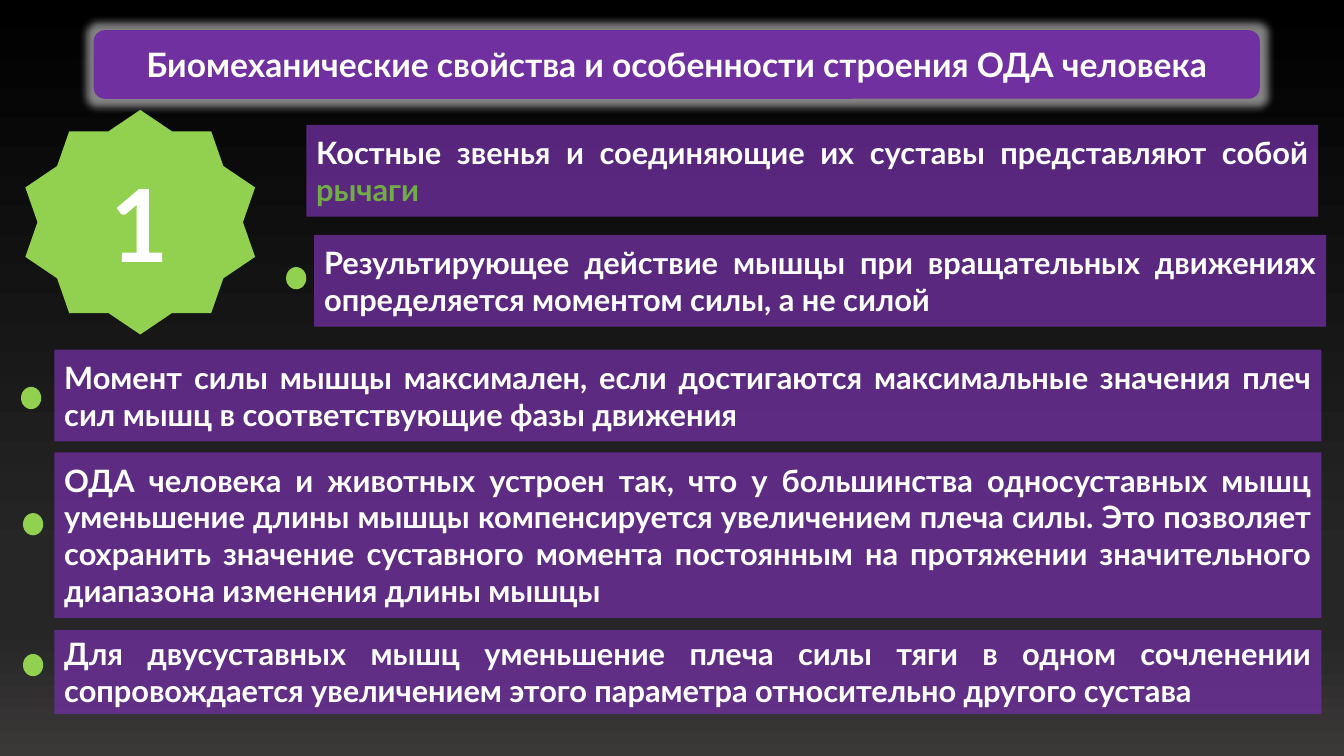
from lxml.etree import SubElement
from pptx import Presentation
from pptx.dml.color import RGBColor
from pptx.enum.shapes import MSO_SHAPE
from pptx.enum.text import MSO_ANCHOR, PP_ALIGN
from pptx.oxml.ns import qn
from pptx.util import Cm, Pt

PURPLE = RGBColor(0x70, 0x30, 0xA0)
LIME = RGBColor(0x92, 0xD0, 0x50)
GREEN = RGBColor(0x70, 0xAD, 0x47)
WHITE = RGBColor(0xFF, 0xFF, 0xFF)
BLACK = RGBColor(0x00, 0x00, 0x00)
CHARCOAL = RGBColor(0x26, 0x26, 0x26)
WARM_GREY = RGBColor(0x3B, 0x38, 0x38)
BACKGROUND_STOPS = [(0, BLACK), (74, CHARCOAL), (83, CHARCOAL), (100, WARM_GREY)]

FONT = "Lato"
TITLE = "Биомеханические свойства и особенности строения ОДА человека"

# Left, top, width, height in cm, then (text, colour) runs
STATEMENTS = [
    (7.72, 3.15, 25.5, 2.31, [
        ("Костные звенья и соединяющие их суставы представляют собой ", WHITE),
        ("рычаги", GREEN)]),
    (7.92, 5.92, 25.5, 2.31, [
        ("Результирующее действие мышцы при вращательных движениях "
         "определяется моментом силы, а не силой", WHITE)]),
    (1.37, 8.81, 31.93, 2.31, [
        ("Момент силы мышцы максимален, если достигаются максимальные значения "
         "плеч сил мышц в соответствующие фазы движения", WHITE)]),
    (1.37, 11.4, 31.93, 4.17, [
        ("ОДА человека и животных устроен так, что у большинства односуставных "
         "мышц уменьшение длины мышцы компенсируется увеличением плеча силы. "
         "Это позволяет сохранить значение суставного момента постоянным на "
         "протяжении значительного диапазона изменения длины мышцы", WHITE)]),
    (1.37, 15.88, 31.93, 2.11, [
        ("Для двусуставных мышц уменьшение плеча силы тяги в одном сочленении "
         "сопровождается увеличением этого параметра относительно другого "
         "сустава", WHITE)]),
]
MARKERS = [(7.21, 6.73), (0.53, 9.75), (0.58, 12.93), (0.58, 16.48)]


def add_color(parent, color, alpha=None):
    """Append an a:srgbClr element, with opacity in percent if given."""
    element = SubElement(parent, qn("a:srgbClr"), val=str(color))
    if alpha is not None:
        SubElement(element, qn("a:alpha"), val=str(alpha * 1000))


def set_background(slide):
    fill = slide.background.fill
    fill.gradient()
    fill.gradient_angle = 270
    stop_list = next(slide.background._cSld.iter(qn("a:gsLst")))
    for stop in list(stop_list):
        stop_list.remove(stop)
    for position, color in BACKGROUND_STOPS:
        stop = SubElement(stop_list, qn("a:gs"), pos=str(position * 1000))
        add_color(stop, color)


def add_filled_shape(slide, kind, left, top, width, height, color):
    shape = slide.shapes.add_shape(kind, Cm(left), Cm(top), Cm(width), Cm(height))
    shape.shadow.inherit = False
    shape.fill.solid()
    shape.fill.fore_color.rgb = color
    shape.line.fill.background()
    return shape


def write_text(shape, runs, size, alignment):
    shape.text_frame.word_wrap = True
    shape.text_frame.vertical_anchor = MSO_ANCHOR.MIDDLE
    paragraph = shape.text_frame.paragraphs[0]
    paragraph.alignment = alignment
    paragraph.font.name = FONT
    paragraph.font.size = Pt(size)
    paragraph.font.bold = True
    for text, color in runs:
        run = paragraph.add_run()
        run.text = text
        run.font.color.rgb = color


def add_glow(shape, color, radius, alpha):
    effects = shape._element.spPr.find(qn("a:effectLst"))
    add_color(SubElement(effects, qn("a:glow"), rad=str(radius)), color, alpha)


def add_title(slide):
    title = add_filled_shape(slide, MSO_SHAPE.FLOWCHART_ALTERNATE_PROCESS,
                             2.36, 0.76, 29.39, 1.73, PURPLE)
    add_glow(title, WHITE, Pt(11), 50)
    write_text(title, [(TITLE, WHITE)], 24, PP_ALIGN.CENTER)


def add_number_star(slide):
    star = add_filled_shape(slide, MSO_SHAPE.STAR_10_POINT,
                            0.64, 2.77, 5.79, 5.66, LIME)
    write_text(star, [("1", WHITE)], 72, PP_ALIGN.CENTER)


def add_statement(slide, left, top, width, height, runs):
    box = add_filled_shape(slide, MSO_SHAPE.FLOWCHART_PROCESS,
                           left, top, width, height, PURPLE)
    color = box._element.spPr.find(qn("a:solidFill")).find(qn("a:srgbClr"))
    SubElement(color, qn("a:alpha"), val="77000")
    write_text(box, runs, 22, PP_ALIGN.JUSTIFY)


def main():
    presentation = Presentation()
    presentation.slide_width = Cm(33.87)
    presentation.slide_height = Cm(19.05)
    slide = presentation.slides.add_slide(presentation.slide_layouts[6])

    set_background(slide)
    add_title(slide)
    add_number_star(slide)
    for statement in STATEMENTS:
        add_statement(slide, *statement)
    for left, top in MARKERS:
        add_filled_shape(slide, MSO_SHAPE.FLOWCHART_CONNECTOR,
                         left, top, 0.51, 0.56, LIME)

    presentation.save("out.pptx")


if __name__ == "__main__":
    main()
